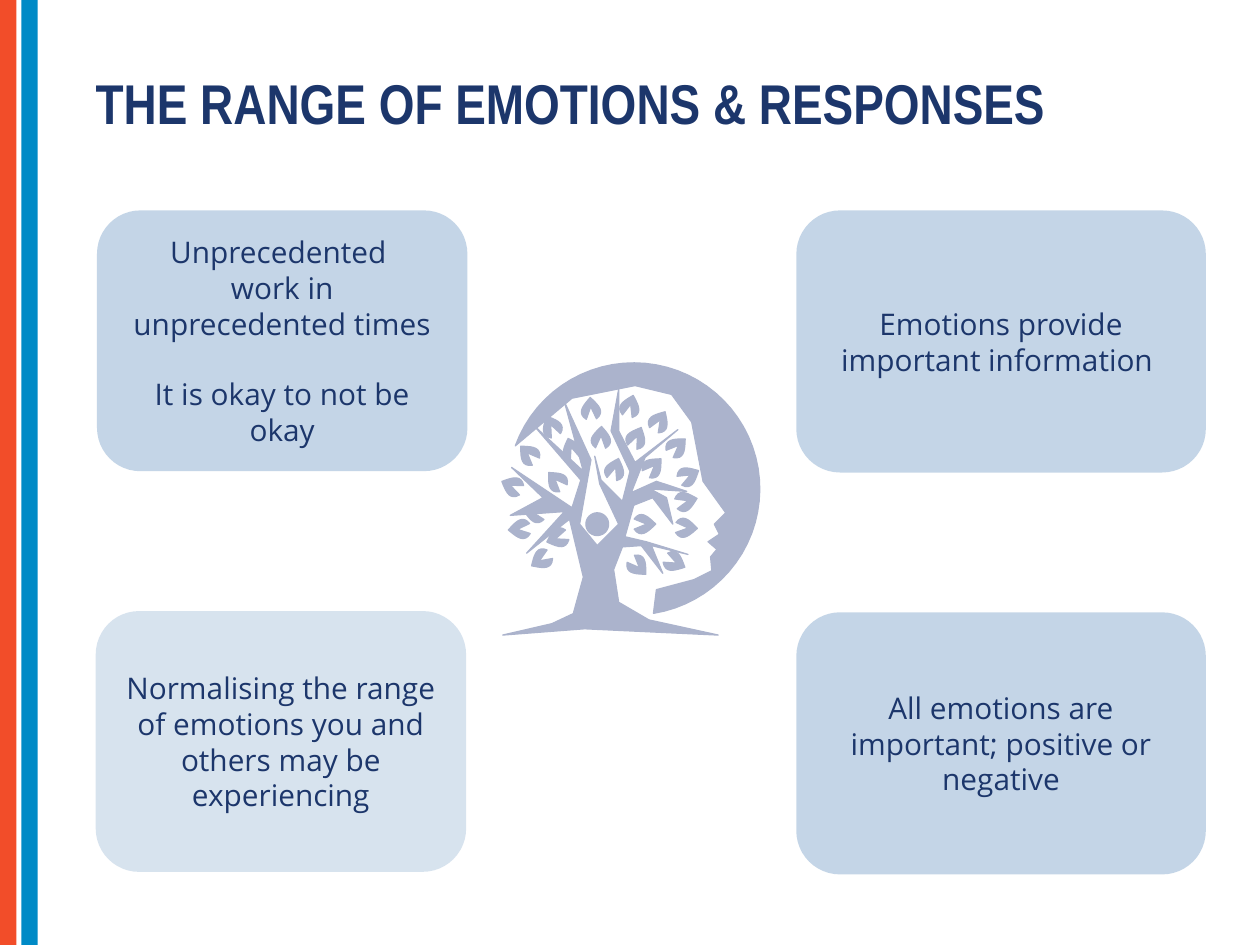
import math
from dataclasses import dataclass

import pptx
import pptx.util
import pptx.dml.color
import pptx.enum.shapes
import pptx.enum.text
import pptx.oxml
import pptx.oxml.ns

Inches, Pt = pptx.util.Inches, pptx.util.Pt
RGB = pptx.dml.color.RGBColor.from_string
SHAPE = pptx.enum.shapes.MSO_SHAPE
ALIGN = pptx.enum.text.PP_ALIGN
MIDDLE = pptx.enum.text.MSO_ANCHOR.MIDDLE


@dataclass(frozen=True)
class Theme:
    """Colours, fonts and type sizes of the slide."""
    navy: str = "1C366B"
    orange: str = "F24D29"
    blue: str = "008AC6"
    card: str = "B1C8DF"
    tree: str = "ABB3CC"
    title_font: str = "Arial Narrow"
    body_font: str = "Open Sans"
    title_size: int = 32
    body_size: int = 17


THEME = Theme()

ART_WIDTH, ART_HEIGHT = 204, 216
HEART = (75, 128)
HEART_RADIUS = 9
LEAVES_A = [(31, 156), (26, 119), (21, 73), (55, 69), (70, 37), (124, 47), (119, 83),
            (145, 110), (112, 128), (107, 161)]
LEAVES_B = [(43, 94), (8, 98), (39, 51), (78, 60), (89, 85), (147, 90), (106, 60),
            (101, 35), (138, 67), (14, 132), (44, 139), (136, 158), (145, 131)]
TRUNK = [
    (0, 216), (65, 211), (171, 216), (116, 204), (92, 190), (88, 164), (95, 146),
    (110, 145), (127, 167), (118, 145), (147, 152), (114, 142), (97, 138),
    (104, 113), (119, 107), (135, 128), (130, 107), (117, 100), (146, 102),
    (122, 94), (102, 103), (113, 75), (139, 53), (105, 79), (92, 54), (92, 21),
    (86, 54), (101, 86), (95, 110), (78, 93), (73, 74), (77, 96), (92, 128),
    (75, 145), (61, 128), (70, 77), (49, 31), (64, 86), (25, 50), (62, 93),
    (55, 115), (7, 83), (32, 107), (6, 121), (49, 118), (19, 151), (53, 124),
    (64, 170), (56, 199), (39, 207)]
FACE = [
    (122, 180), (152, 172), (166, 165), (165, 154), (170, 148), (163, 142), (172, 136),
    (168, 128), (177, 119), (159, 94), (150, 47), (134, 25), (105, 18), (55, 28)]


def add_text(tf, text, font=THEME.body_font, size=THEME.body_size, bold=False,
             align=ALIGN.CENTER, spacing=None, gap=0):
    """Write paragraphs split at blank lines, with line breaks at single newlines."""
    tf.word_wrap = True
    tf.vertical_anchor = MIDDLE
    for i, block in enumerate(text.split("\n\n")):
        p = tf.add_paragraph() if i else tf.paragraphs[0]
        p.alignment = align
        p.line_spacing = spacing
        p.space_before = Pt(gap if i else 0)
        for j, line in enumerate(block.split("\n")):
            if j:
                p.add_line_break()
            r = p.add_run()
            r.text = line
            r.font.name, r.font.size, r.font.bold = font, Pt(size), bold
            r.font.color.rgb = RGB(THEME.navy)


def add_block(s, kind, box, color, alpha=100):
    """Add a plain filled shape without outline or shadow."""
    sp = s.shapes.add_shape(kind, *map(Inches, box))
    sp.shadow.inherit = False
    sp.fill.solid()
    sp.fill.fore_color.rgb = RGB(color)
    sp.line.fill.background()
    if alpha < 100:
        clr = sp._element.spPr.find(".//" + pptx.oxml.ns.qn("a:srgbClr"))
        clr.append(pptx.oxml.parse_xml(
            f'<a:alpha {pptx.oxml.ns.nsdecls("a")} val="{alpha * 1000}"/>'))
    return sp


def add_stripes(s, box):
    """Draw two vertical stripes at the left and right edges of the box."""
    left, top, width, height = box
    bar = 0.13
    for x, color in ((left, THEME.orange), (left + width - bar, THEME.blue)):
        add_block(s, SHAPE.RECTANGLE, (x, top, bar, height), color)


def add_title(s, box, text):
    """Place and format the title placeholder."""
    sp = s.shapes.title
    sp.left, sp.top, sp.width, sp.height = map(Inches, box)
    tf = sp.text_frame
    tf.margin_left = tf.margin_right = tf.margin_top = tf.margin_bottom = 0
    add_text(tf, text, font=THEME.title_font, size=THEME.title_size, bold=True,
             align=ALIGN.LEFT, spacing=0.9)


def add_card(s, box, text, alpha=75):
    """Draw a translucent rounded card with centred text."""
    sp = add_block(s, SHAPE.ROUNDED_RECTANGLE, box, THEME.card, alpha)
    add_text(sp.text_frame, text, gap=20)


def arc(center, radius, start, end, steps=48):
    """List points along a circular arc given in degrees."""
    angles = [math.radians(start + (end - start) * i / steps) for i in range(steps + 1)]
    return [(center[0] + radius * math.cos(a), center[1] + radius * math.sin(a))
            for a in angles]


def leaf(x, y, length=19, steps=10):
    """Outline a notched leaf that points away from the heart of the tree."""
    angle = math.atan2(y - HEART[1], x - HEART[0])
    ux, uy = math.cos(angle) * length, math.sin(angle) * length
    side = [(i / steps, 0.4 * math.sin(math.pi * (i / steps) ** 0.75))
            for i in range(1, steps + 1)]
    outline = side + [(t, -n) for t, n in reversed(side[:-1])] + [(0.62, 0)]
    return [(x + (t - 0.5) * ux - n * uy, y + (t - 0.5) * uy + n * ux) for t, n in outline]


def add_tree(s, box):
    """Draw the tree with its leaves and the face profile, scaled to the box."""
    left, top, width, height = box
    group = s.shapes.add_group_shape()
    leaves = [[leaf(x, y) for x, y in part] for part in (LEAVES_A, LEAVES_B)]
    tree = [TRUNK, arc(HEART, HEART_RADIUS, 0, 360)]
    profile = [arc((104, 100), 100, 200, 441) + FACE]
    for contours in (*leaves, tree, profile):
        builder = None
        for contour in contours:
            pts = [(Inches(left + x / ART_WIDTH * width), Inches(top + y / ART_HEIGHT * height))
                   for x, y in contour]
            if builder is None:
                builder = group.shapes.build_freeform(*pts[0])
            else:
                builder.move_to(*pts[0])
            builder.add_line_segments(pts[1:], close=True)
        sp = builder.convert_to_shape()
        sp.shadow.inherit = False
        sp.fill.solid()
        sp.fill.fore_color.rgb = sp.line.color.rgb = RGB(THEME.tree)
        sp.line.width = Pt(0.75)


def main():
    """Build the slide and save it."""
    prs = pptx.Presentation()
    prs.slide_width, prs.slide_height = Inches(10), Inches(7.5)
    s = prs.slides.add_slide(prs.slide_layouts[5])
    add_stripes(s, (0, 0, 0.3, 7.5))
    add_title(s, (0.76, 0.65, 8.22, 0.39), "THE RANGE OF EMOTIONS & RESPONSES")
    add_tree(s, (3.99, 2.88, 2.04, 2.16))
    add_card(s, (0.77, 1.67, 2.94, 2.07),
             "Unprecedented \nwork in unprecedented times\n\nIt is okay to not be okay")
    add_card(s, (0.76, 4.85, 2.94, 2.07),
             "Normalising the range of emotions you and others may be experiencing", alpha=50)
    add_card(s, (6.32, 4.86, 3.25, 2.08), "All emotions are important; positive or negative")
    add_card(s, (6.32, 1.67, 3.25, 2.08), "Emotions provide important information ")
    prs.save("out.pptx")


if __name__ == "__main__":
    main()
